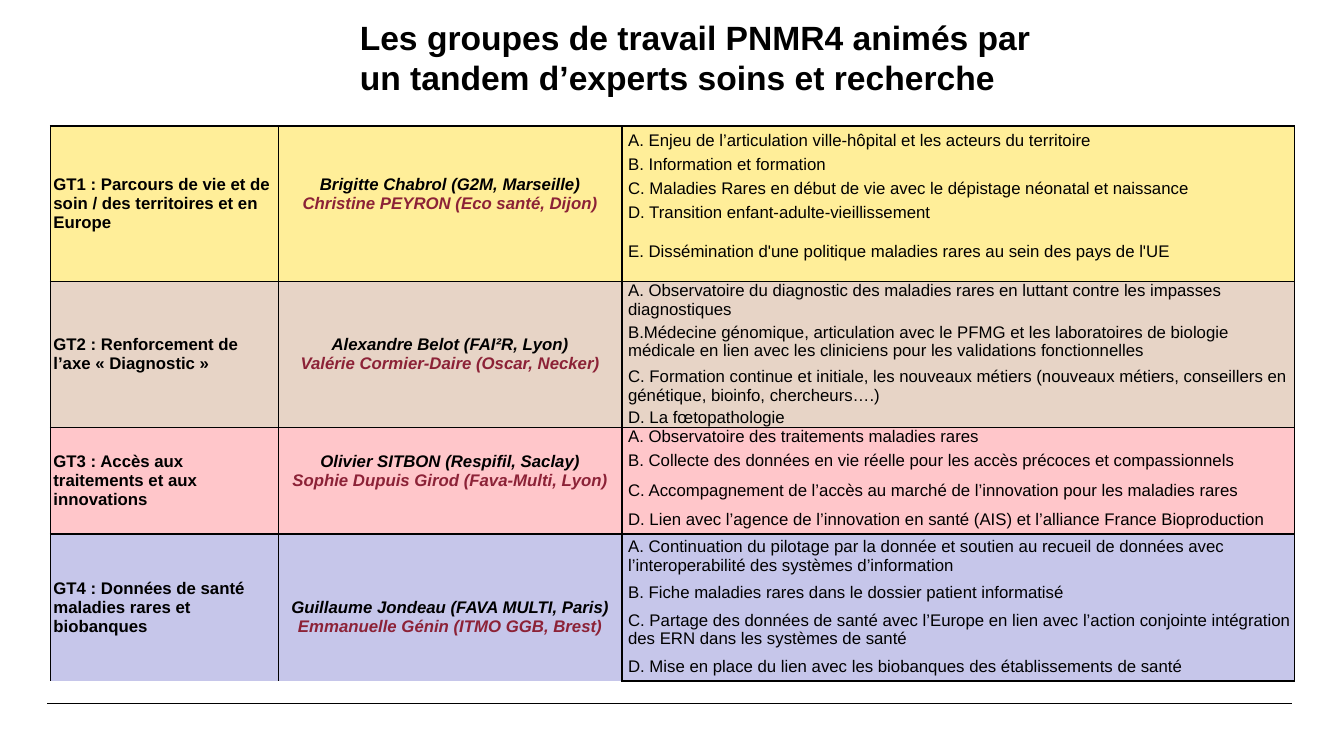
"""Build the slide listing the PNMR4 working groups, their leaders and their topics."""
import pptx
import pptx.dml.color
import pptx.enum.shapes
import pptx.enum.text
import pptx.oxml
import pptx.oxml.ns
import pptx.util
from pptx.util import Inches

THEME = {
    "font": "Arial", "title_size": 24, "table_size": 12,
    "ink": "000000", "research": "8C2237",
    "border_width": 1, "rule_width": 0.8,
}

TITLE = ["Les groupes de travail PNMR4 animés par",
         "un tandem d’experts soins et recherche"]

GROUPS = [
    {"name": "GT1 : Parcours de vie et de soin / des territoires et en Europe",
     "leaders": ("Brigitte Chabrol (G2M, Marseille)", "Christine PEYRON (Eco santé, Dijon)"),
     "leader_margins": (0, 0.19), "fill": "FFEE99",
     "topics": [
         ("A. Enjeu de l’articulation ville-hôpital et les acteurs du territoire", 0.29),
         ("B. Information et formation", 0.19),
         ("C. Maladies Rares en début de vie avec le dépistage néonatal et naissance", 0.29),
         ("D. Transition enfant-adulte-vieillissement", 0.19),
         ("E. Dissémination d'une politique maladies rares au sein des pays de l'UE", 0.58)]},
    {"name": "GT2 : Renforcement de l’axe « Diagnostic »",
     "leaders": ("Alexandre Belot (FAI²R, Lyon)", "Valérie Cormier-Daire (Oscar, Necker)"),
     "leader_margins": (0, 0), "fill": "E7D4C6",
     "topics": [
         ("A. Observatoire du diagnostic des maladies rares en luttant contre les impasses "
          "diagnostiques", 0.38),
         ("B.Médecine génomique, articulation avec le PFMG et les laboratoires de biologie "
          "médicale en lien avec les cliniciens pour les validations fonctionnelles", 0.44),
         ("C. Formation continue et initiale, les nouveaux métiers (nouveaux métiers, "
          "conseillers en génétique, bioinfo, chercheurs….)", 0.44),
         ("D. La fœtopathologie", 0.19)]},
    {"name": "GT3 : Accès aux traitements et aux innovations",
     "leaders": ("Olivier SITBON (Respifil, Saclay)", "Sophie Dupuis Girod (Fava-Multi, Lyon)"),
     "leader_margins": (0, 0.19), "fill": "FFC6CA",
     "topics": [
         ("A. Observatoire des traitements maladies rares", 0.19),
         ("B. Collecte des données en vie réelle pour les accès précoces et compassionnels", 0.29),
         ("C. Accompagnement de l’accès au marché de l’innovation pour les maladies rares", 0.29),
         ("D. Lien avec l’agence de l’innovation en santé (AIS) et l’alliance France "
          "Bioproduction", 0.29)]},
    {"name": "GT4 : Données de santé maladies rares et biobanques",
     "leaders": ("Guillaume Jondeau (FAVA MULTI, Paris)", "Emmanuelle Génin (ITMO GGB, Brest)"),
     "leader_margins": (0.19, 0), "fill": "C6C6EA",
     "topics": [
         ("A. Continuation du pilotage par la donnée et soutien au recueil de données avec "
          "l’interoperabilité des systèmes d’information", 0.44),
         ("B. Fiche maladies rares dans le dossier patient informatisé", 0.29),
         ("C. Partage des données de santé avec l’Europe en lien avec l’action conjointe "
          "intégration des ERN dans les systèmes de santé", 0.44),
         ("D. Mise en place du lien avec les biobanques des établissements de santé", 0.29)]},
]

TITLE_BOX = (3.47, 0.12, 6.92, 0.91)
TABLE_LEFT, TABLE_TOP = 0.5, 1.25
COLUMNS = (2.26, 3.41, 6.67)
RULE = (0.47, 6.98, 12.81, 6.98)


def rgb(code):
    return pptx.dml.color.RGBColor.from_string(code)


def write(frame, lines, size=THEME["table_size"], colors=(THEME["ink"],),
          bold=False, italic=False, align=pptx.enum.text.PP_ALIGN.LEFT):
    for index, line in enumerate(lines):
        paragraph = frame.paragraphs[0] if index == 0 else frame.add_paragraph()
        paragraph.alignment = align
        run = paragraph.add_run()
        run.text = line
        run.font.name = THEME["font"]
        run.font.size = pptx.util.Pt(size)
        run.font.bold = bold
        run.font.italic = italic
        run.font.color.rgb = rgb(colors[index % len(colors)])


def style_cell(cell, fill, sides, left=0, top=0, bottom=0):
    cell.vertical_anchor = pptx.enum.text.MSO_ANCHOR.MIDDLE
    cell.margin_left, cell.margin_right = Inches(left), 0
    cell.margin_top, cell.margin_bottom = Inches(top), Inches(bottom)
    properties = cell._tc.get_or_add_tcPr()
    width = pptx.util.Pt(THEME["border_width"])
    for side in "LRTB":
        paint = (f'<a:solidFill><a:srgbClr val="{THEME["ink"]}"/></a:solidFill>'
                 if side in sides else "<a:noFill/>")
        properties.append(pptx.oxml.parse_xml(
            f'<a:ln{side} {pptx.oxml.ns.nsdecls("a")} w="{width}">{paint}</a:ln{side}>'))
    cell.fill.solid()
    cell.fill.fore_color.rgb = rgb(fill)


def add_title(slide):
    frame = slide.shapes.add_textbox(*map(Inches, TITLE_BOX)).text_frame
    frame.word_wrap = False
    write(frame, TITLE, size=THEME["title_size"], bold=True)


def add_groups(slide):
    heights = [height for group in GROUPS for _, height in group["topics"]]
    table = slide.shapes.add_table(
        len(heights), len(COLUMNS), Inches(TABLE_LEFT), Inches(TABLE_TOP),
        Inches(sum(COLUMNS)), Inches(sum(heights))).table
    table.first_row = table.horz_banding = False
    for column, width in zip(table.columns, COLUMNS):
        column.width = Inches(width)
    for row, height in zip(table.rows, heights):
        row.height = Inches(height)

    first = 0
    for group in GROUPS:
        last = first + len(group["topics"]) - 1
        above, below = group["leader_margins"]
        for row, (topic, _) in enumerate(group["topics"], first):
            sides = "LR" + "T" * (row == first) + "B" * (row == last)
            style_cell(table.cell(row, 0), group["fill"], sides, left=0.03)
            style_cell(table.cell(row, 1), group["fill"], sides, top=above, bottom=below)
            style_cell(table.cell(row, 2), group["fill"], sides, left=0.06)
            write(table.cell(row, 2).text_frame, [topic])
        for column in (0, 1):
            table.cell(first, column).merge(table.cell(last, column))
        write(table.cell(first, 0).text_frame, [group["name"]], bold=True)
        write(table.cell(first, 1).text_frame, group["leaders"], bold=True, italic=True,
              colors=(THEME["ink"], THEME["research"]),
              align=pptx.enum.text.PP_ALIGN.CENTER)
        first = last + 1


def add_rule(slide):
    rule = slide.shapes.add_connector(
        pptx.enum.shapes.MSO_CONNECTOR.STRAIGHT, *map(Inches, RULE))
    rule.line.color.rgb = rgb(THEME["ink"])
    rule.line.width = pptx.util.Pt(THEME["rule_width"])
    rule._element.spPr.append(
        pptx.oxml.parse_xml(f'<a:effectLst {pptx.oxml.ns.nsdecls("a")}/>'))


def main():
    deck = pptx.Presentation()
    deck.slide_width, deck.slide_height = Inches(13.33), Inches(7.5)
    slide = deck.slides.add_slide(deck.slide_layouts[6])
    add_rule(slide)
    add_groups(slide)
    add_title(slide)
    deck.save("out.pptx")


if __name__ == "__main__":
    main()
